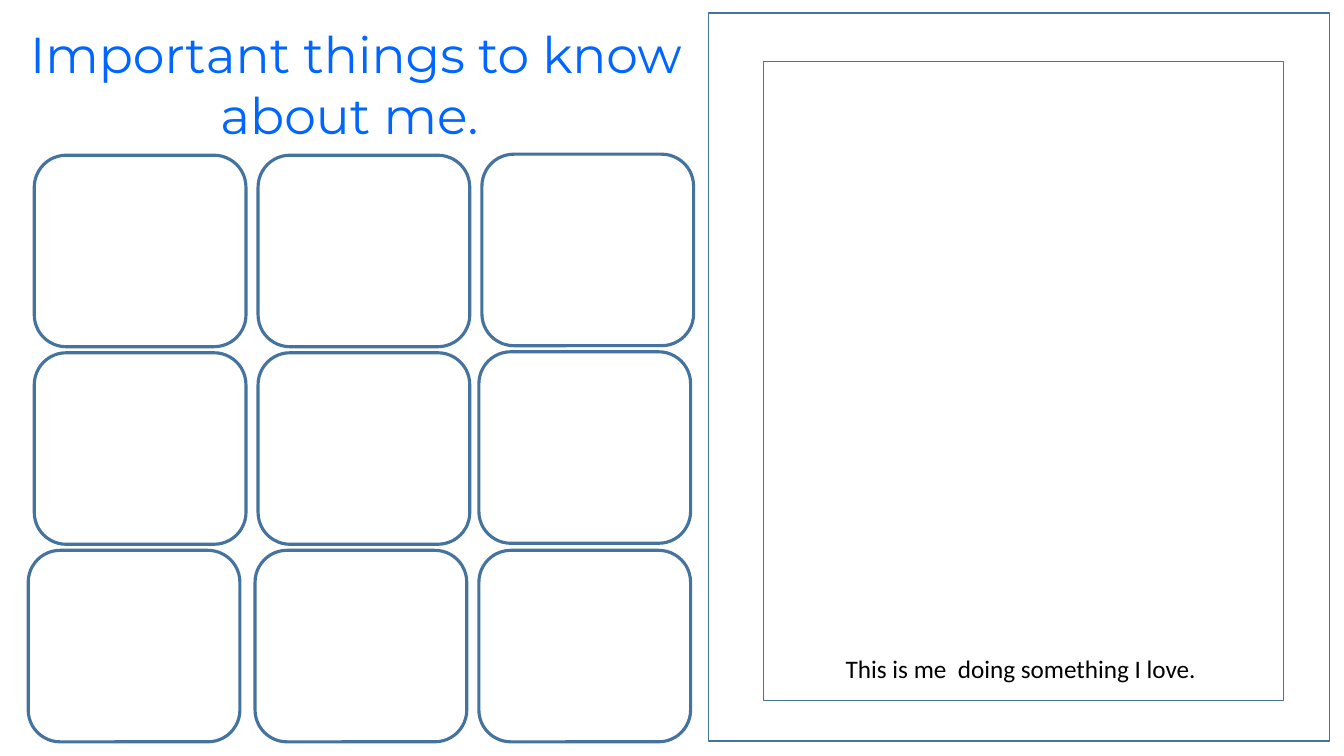
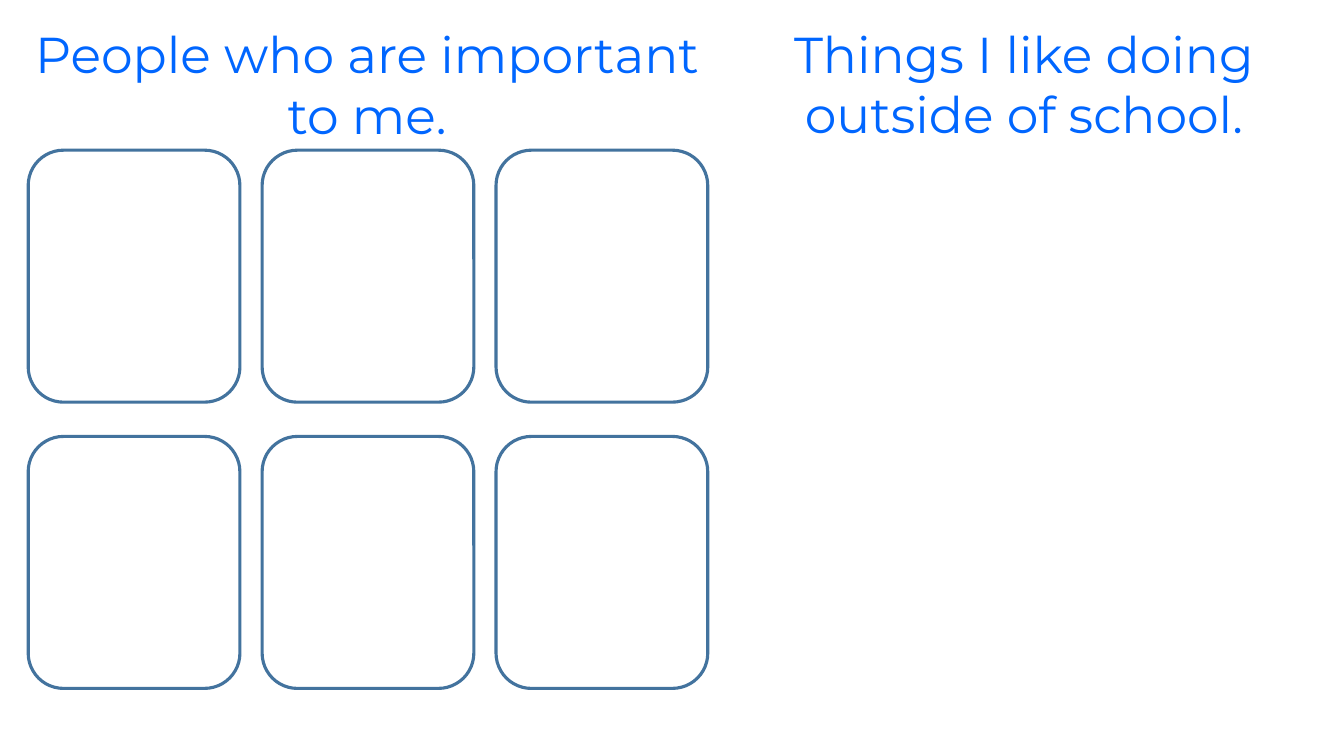
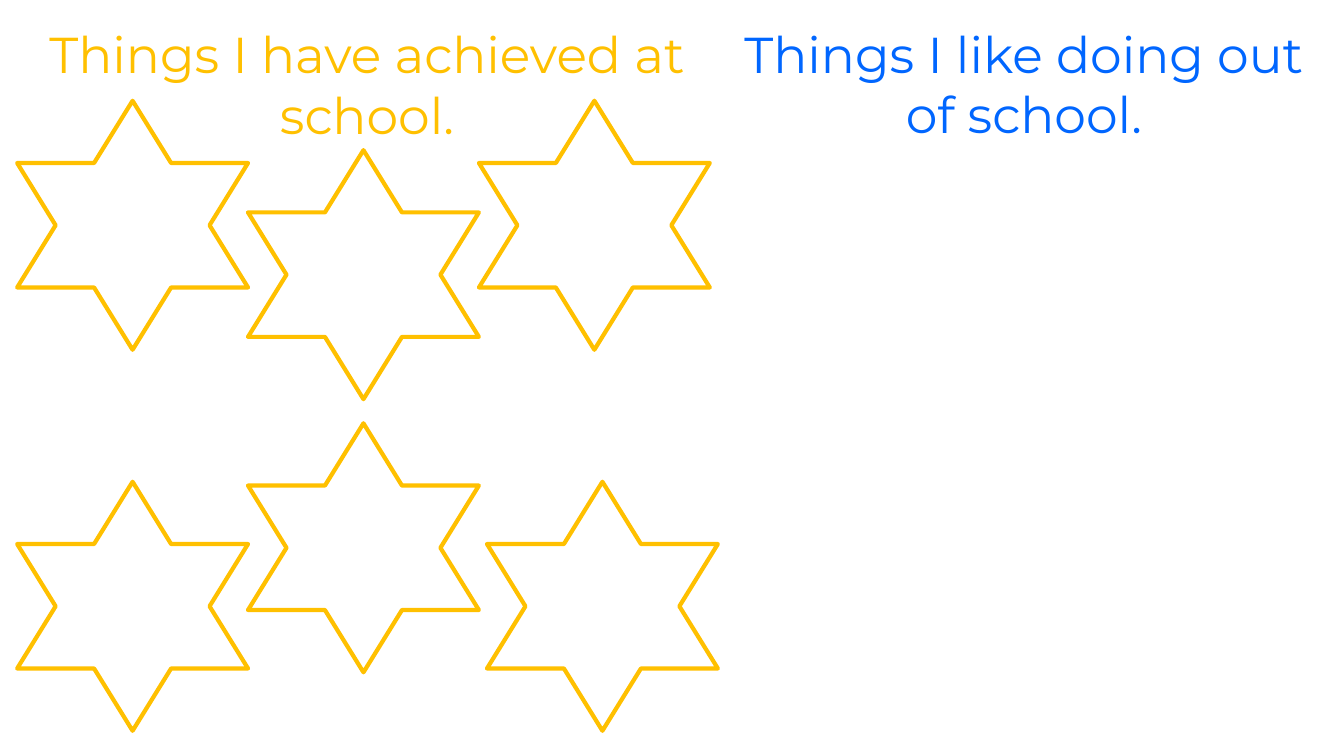
from dataclasses import dataclass

from pptx import Presentation
from pptx.dml.color import RGBColor
from pptx.enum.shapes import MSO_SHAPE
from pptx.enum.text import MSO_ANCHOR, MSO_AUTO_SIZE, PP_ALIGN
from pptx.util import Emu, Pt

RECTANGLE = MSO_SHAPE.RECTANGLE
ROUNDED = MSO_SHAPE.ROUNDED_RECTANGLE
STAR = MSO_SHAPE.STAR_6_POINT
CENTER = PP_ALIGN.CENTER
TOP = MSO_ANCHOR.TOP
NO_AUTOFIT = MSO_AUTO_SIZE.NONE

EMU_PER_PX = 9144  # 100 px to the inch
SLIDE_WIDTH, SLIDE_HEIGHT = 1333, 750
TITLE_ONLY = 5


@dataclass(frozen=True)
class Theme:
    blue: RGBColor = RGBColor(0x00, 0x66, 0xFF)
    gold: RGBColor = RGBColor(0xFF, 0xC0, 0x00)
    outline: RGBColor = RGBColor(0x43, 0x73, 0x9E)
    black: RGBColor = RGBColor(0, 0, 0)
    white: RGBColor = RGBColor(0xFF, 0xFF, 0xFF)
    heading_font: str = "Montserrat"
    body_font: str = "Calibri"
    heading_size: int = 36
    body_size: int = 18
    frame_line: float = 1
    card_line: float = 2.25
    star_line: float = 3


THEME = Theme()

# Heading boxes: left, top, width, height
NARROW_LEFT_HEADING = (17, 18, 672, 131)
LEFT_HEADING = (17, 18, 694, 131)
RIGHT_HEADING = (722, 18, 587, 131)


def px(length):
    return Emu(length * EMU_PER_PX)


def place(box):
    return [px(length) for length in box]


# Text
def style_text(shape, text, font_name, size, color):
    frame = shape.text_frame
    frame.text = text
    frame.word_wrap = True
    frame.auto_size = NO_AUTOFIT
    frame.vertical_anchor = TOP
    paragraph = frame.paragraphs[0]
    paragraph.alignment = CENTER
    font = paragraph.runs[0].font
    font.name = font_name
    font.size = Pt(size)
    font.color.rgb = color


def style_heading(shape, text, color):
    style_text(shape, text, THEME.heading_font, THEME.heading_size, color)


def add_titled_slide(presentation, box, text, color):
    slide = presentation.slides.add_slide(presentation.slide_layouts[TITLE_ONLY])
    title = slide.shapes.title
    title.left, title.top, title.width, title.height = place(box)
    style_heading(title, text, color)
    return slide


def add_right_heading(slide, text):
    heading = slide.shapes.add_textbox(*place(RIGHT_HEADING))
    style_heading(heading, text, THEME.blue)


# Outlined shapes
def add_outline(slide, kind, box, color, line_width, fill=None):
    shape = slide.shapes.add_shape(kind, *place(box))
    shape.shadow.inherit = False
    if fill is None:
        shape.fill.background()
    else:
        shape.fill.solid()
        shape.fill.fore_color.rgb = fill
    shape.line.color.rgb = color
    shape.line.width = Pt(line_width)


def grid_boxes(origin, size, pitch, rows, columns, nudges):
    """Yield cell boxes; nudges shifts single (row, column) cells."""
    for row in range(rows):
        for column in range(columns):
            shift_x, shift_y = nudges.get((row, column), (0, 0))
            yield (origin[0] + column * pitch[0] + shift_x,
                   origin[1] + row * pitch[1] + shift_y, *size)


def add_cards(slide, origin, size, pitch, rows, nudges):
    for box in grid_boxes(origin, size, pitch, rows, 3, nudges):
        add_outline(slide, ROUNDED, box, THEME.outline, THEME.card_line)


def add_stars(slide, origin, size, pitch, rows, nudges):
    for box in grid_boxes(origin, size, pitch, rows, 3, nudges):
        add_outline(slide, STAR, box, THEME.gold, THEME.star_line, THEME.white)


def add_photo_frame(slide, box, caption):
    left, top, width, height = box
    inner = (left + 54, top + 48, width - 100, height - 88)
    for frame_box in (box, inner):
        add_outline(slide, RECTANGLE, frame_box, THEME.outline, THEME.frame_line)
    caption_box = (left + 62, top + 630, width - 121, 40)
    label = slide.shapes.add_textbox(*place(caption_box))
    style_text(label, caption, THEME.body_font, THEME.body_size, THEME.black)


# Slides
def build_about_me(presentation):
    slide = add_titled_slide(presentation, NARROW_LEFT_HEADING,
                             "Important things to know about me. ", THEME.blue)
    add_photo_frame(slide, (703, 13, 616, 722),
                    "This is me  doing something I love.")
    add_cards(slide, origin=(34, 154), size=(210, 190), pitch=(222, 196), rows=3,
              nudges={(0, 2): (0, -1), (1, 2): (-3, -1), (2, 0): (-6, 0),
                      (2, 1): (-3, 0), (2, 2): (-3, 0)})


def build_people(presentation):
    slide = add_titled_slide(presentation, LEFT_HEADING,
                             "People who are important to me.", THEME.blue)
    add_cards(slide, origin=(28, 149), size=(210, 250), pitch=(232, 284), rows=2,
              nudges={})
    add_right_heading(slide, "Things I like doing outside of school.")


def build_achievements(presentation):
    slide = add_titled_slide(presentation, LEFT_HEADING,
                             "Things I have achieved at school.", THEME.gold)
    add_right_heading(slide, "Things I like doing out of school.")
    add_stars(slide, origin=(17, 100), size=(229, 247), pitch=(229, 378), rows=2,
              nudges={(0, 1): (0, 49), (1, 1): (0, -58), (1, 2): (8, 0)})


def main():
    presentation = Presentation()
    presentation.slide_width = px(SLIDE_WIDTH)
    presentation.slide_height = px(SLIDE_HEIGHT)
    build_about_me(presentation)
    build_people(presentation)
    build_achievements(presentation)
    presentation.save("out.pptx")


if __name__ == "__main__":
    main()
